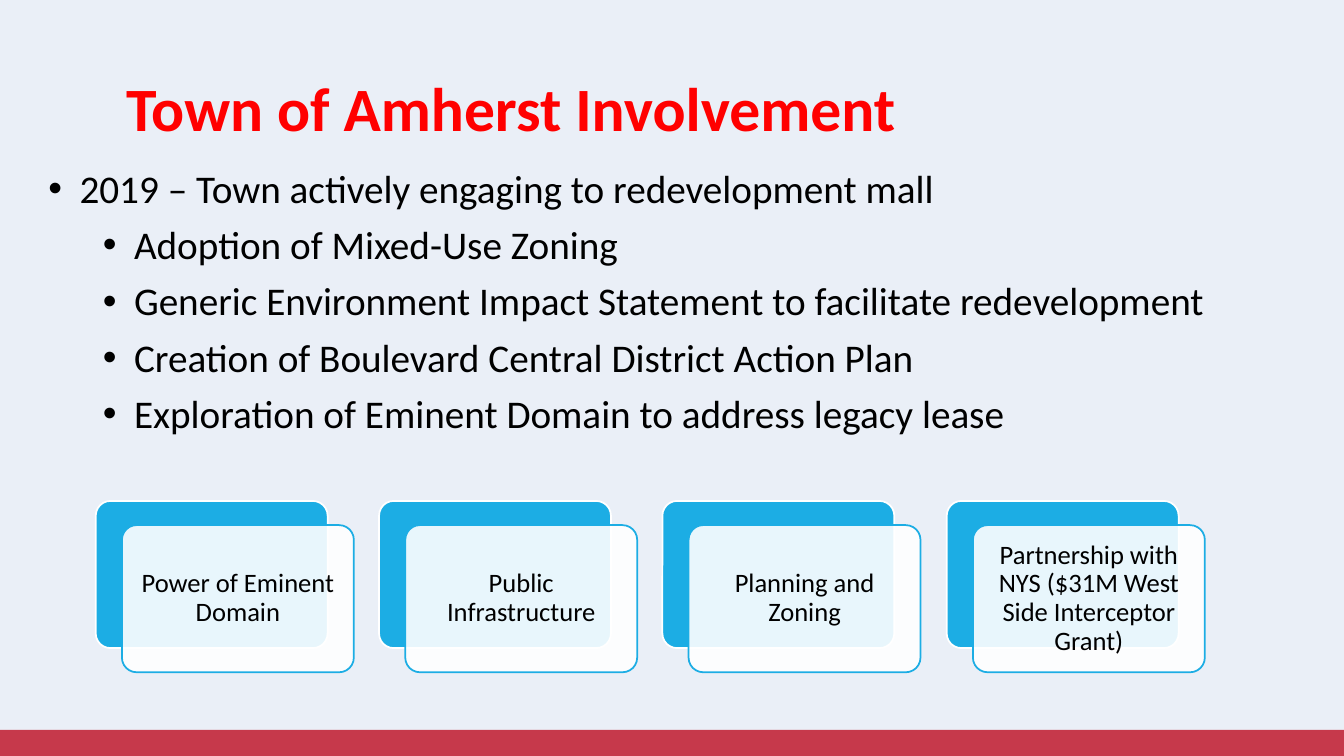
from dataclasses import dataclass

from lxml.etree import SubElement
from pptx import Presentation
from pptx.dml.color import RGBColor
from pptx.enum.shapes import MSO_SHAPE
from pptx.enum.text import MSO_ANCHOR, MSO_AUTO_SIZE, PP_ALIGN
from pptx.oxml.ns import qn
from pptx.util import Emu, Pt

TITLE_ONLY = 5
SLIDE_WIDTH, SLIDE_HEIGHT = 1333, 750
BLACK, WHITE, RED = "000000", "FFFFFF", "FF0000"
SKY, PALE, CRIMSON = "1CADE4", "EAEFF7", "C6394B"
CARD_SPAN = 844


@dataclass(frozen=True)
class Box:
    left: int
    top: int
    width: int
    height: int

    def emu(self) -> list[Emu]:
        return [px(n) for n in (self.left, self.top, self.width, self.height)]


@dataclass(frozen=True)
class Point:
    text: str
    level: int = 0


POINTS = [
    Point("2019 – Town actively engaging to redevelopment mall"),
    Point("Adoption of Mixed-Use Zoning", 1),
    Point("Generic Environment Impact Statement to facilitate redevelopment", 1),
    Point("Creation of Boulevard Central District Action Plan", 1),
    Point("Exploration of Eminent Domain to address legacy lease", 1),
]
TOOLS = [
    "Power of Eminent Domain",
    "Public Infrastructure",
    "Planning and Zoning",
    "Partnership with NYS ($31M West Side Interceptor Grant)",
]


def px(length: int) -> Emu:
    return Emu(length * 9144)


def rgb(value: str) -> RGBColor:
    return RGBColor.from_string(value)


def write(frame, points: list[Point], *, size: int, color: str = BLACK,
          bold: bool = False, align: PP_ALIGN = PP_ALIGN.LEFT,
          anchor: MSO_ANCHOR = MSO_ANCHOR.TOP, inset: int = 5,
          gap: int = 0, bulleted: bool = False) -> None:
    frame.word_wrap = True
    frame.auto_size = MSO_AUTO_SIZE.NONE
    frame.vertical_anchor = anchor
    frame.margin_left = frame.margin_right = px(inset)
    frame.margin_top = frame.margin_bottom = px(inset)
    for index, point in enumerate(points):
        paragraph = frame.add_paragraph() if index else frame.paragraphs[0]
        paragraph.level = point.level
        paragraph.alignment = align
        paragraph.line_spacing = 0.9
        paragraph.space_before = Pt(gap if index else 0)
        if bulleted:
            properties = paragraph._p.get_or_add_pPr()
            properties.set("marL", str(px(31 + 54 * point.level)))
            properties.set("indent", str(px(-31)))
            SubElement(properties, qn("a:buFont"), typeface="Arial")
            SubElement(properties, qn("a:buChar"), char="•")
        run = paragraph.add_run()
        run.text = point.text
        run.font.name = "Calibri"
        run.font.size = Pt(size)
        run.font.bold = bold
        run.font.color.rgb = rgb(color)


def draw(slide, box: Box, *, fill: str, line: str | None = None,
         rounded: bool = False, opacity: int = 100):
    preset = MSO_SHAPE.ROUNDED_RECTANGLE if rounded else MSO_SHAPE.RECTANGLE
    shape = slide.shapes.add_shape(preset, *box.emu())
    shape.shadow.inherit = False
    shape.fill.solid()
    shape.fill.fore_color.rgb = rgb(fill)
    if rounded:
        shape.adjustments[0] = 0.1
    if opacity < 100:
        tint = shape._element.spPr.find(qn("a:solidFill"))[0]
        SubElement(tint, qn("a:alpha"), val=str(opacity * 1000))
    if line:
        shape.line.color.rgb = rgb(line)
        shape.line.width = Pt(1.25)
    else:
        shape.line.fill.background()
    return shape


def draw_card(slide, left: int, label: str) -> None:
    draw(slide, Box(left, 497, 230, 146), fill=SKY, line=WHITE, rounded=True)
    card = draw(slide, Box(left + 26, 521, 230, 146), fill=WHITE, line=SKY,
                rounded=True, opacity=90)
    write(card.text_frame, [Point(label)], size=19, align=PP_ALIGN.CENTER,
          anchor=MSO_ANCHOR.MIDDLE, inset=8)


def main() -> None:
    deck = Presentation()
    deck.slide_width, deck.slide_height = px(SLIDE_WIDTH), px(SLIDE_HEIGHT)
    slide = deck.slides.add_slide(deck.slide_layouts[TITLE_ONLY])
    slide.background.fill.solid()
    slide.background.fill.fore_color.rgb = rgb(PALE)
    draw(slide, Box(0, 724, SLIDE_WIDTH, 26), fill=CRIMSON)

    heading = slide.shapes.title
    heading.left, heading.top, heading.width, heading.height = Box(120, 31, 1137, 159).emu()
    write(heading.text_frame, [Point("Town of Amherst Involvement")], size=44,
          color=RED, bold=True, anchor=MSO_ANCHOR.MIDDLE)

    for index, label in enumerate(TOOLS):
        draw_card(slide, 95 + index * CARD_SPAN // (len(TOOLS) - 1), label)

    involvement = slide.shapes.add_textbox(*Box(43, 163, 1244, 287).emu())
    write(involvement.text_frame, POINTS, size=28, gap=10, bulleted=True)
    deck.save("out.pptx")


if __name__ == "__main__":
    main()
